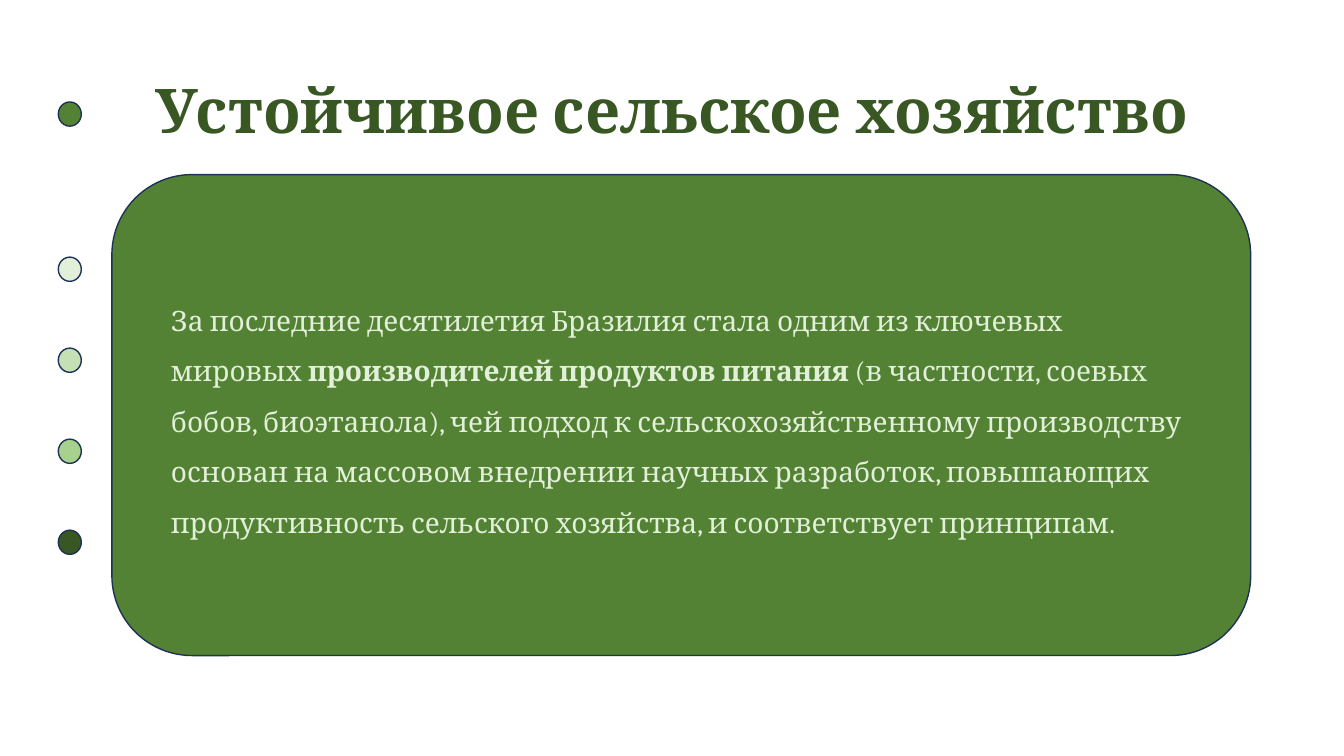
import pptx
import pptx.dml.color
import pptx.enum.shapes
import pptx.enum.text
import pptx.util

Cm = pptx.util.Cm
Shapes = pptx.enum.shapes.MSO_SHAPE
Anchor = pptx.enum.text.MSO_ANCHOR
Align = pptx.enum.text.PP_ALIGN

FONT = "Cambria"
DARK, GREEN, PALE, OUTLINE = "385723", "548235", "E2F0D9", "1E3256"
TITLE = "Устойчивое сельское хозяйство"
BODY = [
    ("За последние десятилетия Бразилия стала одним из ключевых мировых ", False),
    ("производителей продуктов питания ", True),
    ("(в частности, соевых бобов, биоэтанола), чей подход к "
     "сельскохозяйственному производству основан на массовом внедрении "
     "научных разработок, повышающих продуктивность сельского хозяйства, "
     "и соответствует принципам.", False),
]


def color(value):
    return pptx.dml.color.RGBColor.from_string(value)


def add_outlined(slide, kind, left, top, width, height, fill):
    shape = slide.shapes.add_shape(kind, Cm(left), Cm(top), Cm(width), Cm(height))
    shape.shadow.inherit = False
    shape.fill.solid()
    shape.fill.fore_color.rgb = color(fill)
    shape.line.color.rgb = color(OUTLINE)
    shape.line.width = pptx.util.Pt(1)


def add_text(slide, left, top, width, height, runs, size, fill, spacing):
    box = slide.shapes.add_textbox(Cm(left), Cm(top), Cm(width), Cm(height))
    box.text_frame.word_wrap = True
    paragraph = box.text_frame.paragraphs[0]
    paragraph.line_spacing = spacing
    paragraph.font.name = FONT
    paragraph.font.size = pptx.util.Pt(size)
    paragraph.font.color.rgb = color(fill)
    for text, bold in runs:
        run = paragraph.add_run()
        run.text = text
        run.font.bold = bold
    return box.text_frame


def add_title(slide, left, top, width, height):
    frame = add_text(slide, left, top, width, height, [(TITLE, True)], 44, DARK, 0.9)
    frame.vertical_anchor = Anchor.MIDDLE
    frame.paragraphs[0].alignment = Align.CENTER


def add_dots(slide, left, top, width, height):
    dot_width, dot_height, first_gap = width, 0.61, 3.91
    # One dot beside the title, the others evenly spaced below it
    add_outlined(slide, Shapes.OVAL, left, top, dot_width, dot_height, GREEN)
    fills = [PALE, "C5E0B4", "A9D18E", DARK]
    step = (height - first_gap - dot_height) / (len(fills) - 1)
    for index, fill in enumerate(fills):
        dot_top = top + first_gap + index * step
        add_outlined(slide, Shapes.OVAL, left, dot_top, dot_width, dot_height, fill)


def add_card(slide, left, top, width, height):
    add_outlined(slide, Shapes.ROUNDED_RECTANGLE, left, top, width, height, GREEN)
    inset, drop = 1.24, 2.7
    add_text(slide, left + inset, top + drop, width - 2 * inset, height - 2 * drop,
             BODY, 20, PALE, 1.5)


def main():
    presentation = pptx.Presentation()
    presentation.slide_width = Cm(33.87)
    presentation.slide_height = Cm(19.05)
    slide = presentation.slides.add_slide(presentation.slide_layouts[6])

    add_title(slide, 2.34, 1.02, 29.21, 3.68)
    add_dots(slide, 1.47, 2.57, 0.58, 11.4)
    add_card(slide, 2.82, 4.4, 28.7, 12.12)

    presentation.save("out.pptx")


if __name__ == "__main__":
    main()
